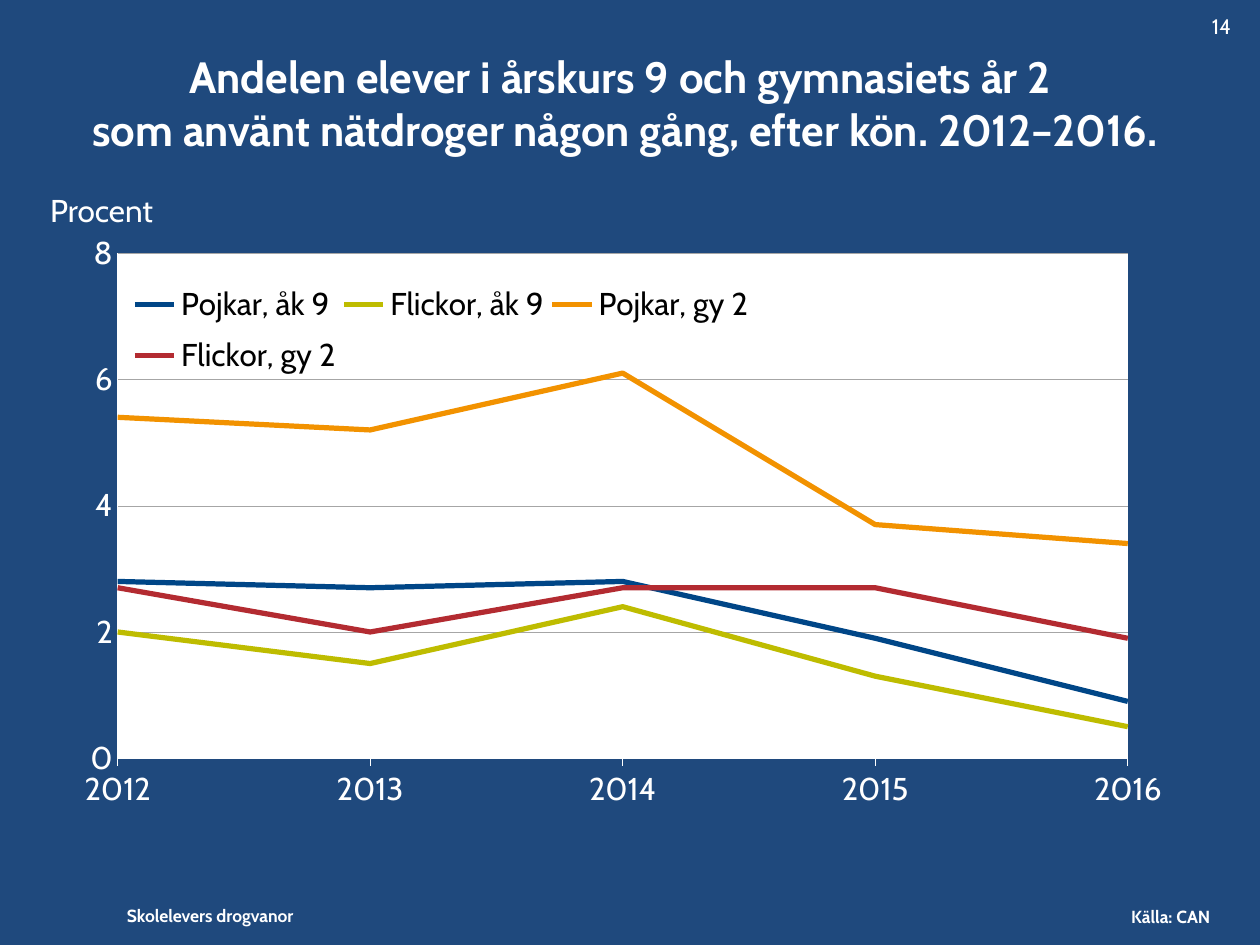
from lxml.etree import SubElement
from pptx import Presentation
from pptx.chart.data import CategoryChartData
from pptx.dml.color import RGBColor
from pptx.enum.chart import XL_CHART_TYPE as ChartType
from pptx.enum.chart import XL_LEGEND_POSITION as LegendPosition
from pptx.enum.chart import XL_TICK_MARK as TickMark
from pptx.enum.text import MSO_ANCHOR as Anchor
from pptx.enum.text import PP_ALIGN as Align
from pptx.oxml import parse_xml
from pptx.oxml.ns import nsdecls, qn
from pptx.util import Inches, Pt

FONT = "Cabin"
WHITE = "FFFFFF"
BLACK = "000000"
BLUE = "1F497D"
GRAY = "A6A6A6"

YEARS = ["2012", "2013", "2014", "2015", "2016"]
SERIES = [
    ("Pojkar, åk 9", [2.8, 2.7, 2.8, 1.9, 0.9], "004687"),
    ("Flickor, åk 9", [2, 1.5, 2.4, 1.3, 0.5], "BEBC00"),
    ("Pojkar, gy 2", [5.4, 5.2, 6.1, 3.7, 3.4], "F29200"),
    ("Flickor, gy 2", [2.7, 2, 2.7, 2.7, 1.9], "B32B31"),
]


def color(value):
    return RGBColor.from_string(value)


def style_font(font, size, value=WHITE, bold=False):
    font.name = FONT
    font.size = Pt(size)
    font.bold = bold
    font.color.rgb = color(value)


def style_line(line, value, width):
    line.color.rgb = color(value)
    line.width = Pt(width)


def add_text(slide, box, text, size, bold=False, align=Align.LEFT, anchor=Anchor.TOP):
    shape = slide.shapes.add_textbox(*map(Inches, box))
    frame = shape.text_frame
    frame.word_wrap = True
    frame.vertical_anchor = anchor
    paragraph = frame.paragraphs[0]
    paragraph.text = text
    paragraph.alignment = align
    for run in paragraph.runs:
        style_font(run.font, size, bold=bold)


def set_layout(parent, x, y, width, height, inner=False):
    for old in parent.findall(qn("c:layout")):
        parent.remove(old)
    layout = parse_xml(f"<c:layout {nsdecls('c')}/>")
    manual = SubElement(layout, qn("c:manualLayout"))
    settings = [("layoutTarget", "inner")] if inner else []
    settings += [("xMode", "edge"), ("yMode", "edge")]
    settings += [("x", x), ("y", y), ("w", width), ("h", height)]
    for name, value in settings:
        SubElement(manual, qn(f"c:{name}")).set("val", str(value))
    return layout


def style_axes(chart):
    years = chart.category_axis
    years.major_tick_mark = TickMark.OUTSIDE
    years.minor_tick_mark = TickMark.NONE
    style_line(years.format.line, WHITE, 0.75)

    percent = chart.value_axis
    percent.minimum_scale = 0
    percent.maximum_scale = 8
    percent.major_unit = 2
    percent.major_tick_mark = TickMark.NONE
    percent.minor_tick_mark = TickMark.NONE
    percent.tick_labels.number_format = "0"
    percent.tick_labels.number_format_is_linked = False
    style_line(percent.format.line, WHITE, 0.25)
    style_line(percent.major_gridlines.format.line, GRAY, 0.25)

    for axis in (years, percent):
        style_font(axis.tick_labels.font, 18)


def style_plot_area(chart):
    area = chart.plots[0]._element.getparent()
    area.insert(0, set_layout(area, 0.062, 0.089, 0.914, 0.794, inner=True))
    major_unit = area.find(qn("c:valAx")).find(qn("c:majorUnit"))
    major_unit.addprevious(parse_xml(f'<c:crossBetween {nsdecls("c")} val="midCat"/>'))
    area.append(parse_xml(
        f'<c:spPr {nsdecls("c", "a")}><a:solidFill><a:srgbClr val="{WHITE}"/>'
        "</a:solidFill><a:ln><a:noFill/></a:ln></c:spPr>"
    ))


def style_legend(chart):
    chart.has_legend = True
    legend = chart.legend
    legend.position = LegendPosition.TOP
    legend.include_in_layout = False
    style_font(legend.font, 18, BLACK)
    element = legend._element
    layout = set_layout(element, 0.07, 0.12, 0.57, 0.18)
    element.find(qn("c:legendPos")).addnext(layout)


def add_line_chart(slide, box):
    data = CategoryChartData(number_format="0.0")
    data.categories = YEARS
    for name, values, _ in SERIES:
        data.add_series(name, values)
    chart = slide.shapes.add_chart(ChartType.LINE, *map(Inches, box), data).chart
    chart.has_title = False
    style_font(chart.font, 18)
    plot = chart.plots[0]
    plot.vary_by_categories = False
    for series, (_, _, value) in zip(plot.series, SERIES):
        series.smooth = False
        style_line(series.format.line, value, 3)
    style_axes(chart)
    style_plot_area(chart)
    style_legend(chart)


def add_header(slide, box):
    left, top, width, height = box
    title = "Andelen elever i årskurs 9 och gymnasiets år 2 \nsom använt nätdroger någon gång, efter kön. 2012–2016."
    add_text(slide, (left + 0.04, top + 0.3, width - 0.16, height - 0.3), title, 25,
             bold=True, align=Align.CENTER, anchor=Anchor.MIDDLE)
    add_text(slide, (left + width - 0.48, top + 0.06, 0.48, 0.3), "14", 12)


def add_footer(slide, box):
    left, top, width, height = box
    add_text(slide, (left, top, 2, height), "Skolelevers drogvanor", 10, bold=True)
    add_text(slide, (left + width - 0.94, top + 0.01, 0.94, height), "Källa: CAN", 10, bold=True)


def build_slide(presentation):
    slide = presentation.slides.add_slide(presentation.slide_layouts[6])
    slide.background.fill.solid()
    slide.background.fill.fore_color.rgb = color(BLUE)
    add_footer(slide, (0.91, 7.13, 8.91, 0.27))
    add_header(slide, (0, 0, 10, 1.33))
    add_line_chart(slide, (0.39, 1.56, 8.83, 5.05))
    add_text(slide, (0.3, 1.47, 1.1, 0.4), "Procent", 18, anchor=Anchor.MIDDLE)


def main():
    presentation = Presentation()
    presentation.slide_width = Inches(10)
    presentation.slide_height = Inches(7.5)
    build_slide(presentation)
    presentation.save("out.pptx")


if __name__ == "__main__":
    main()
